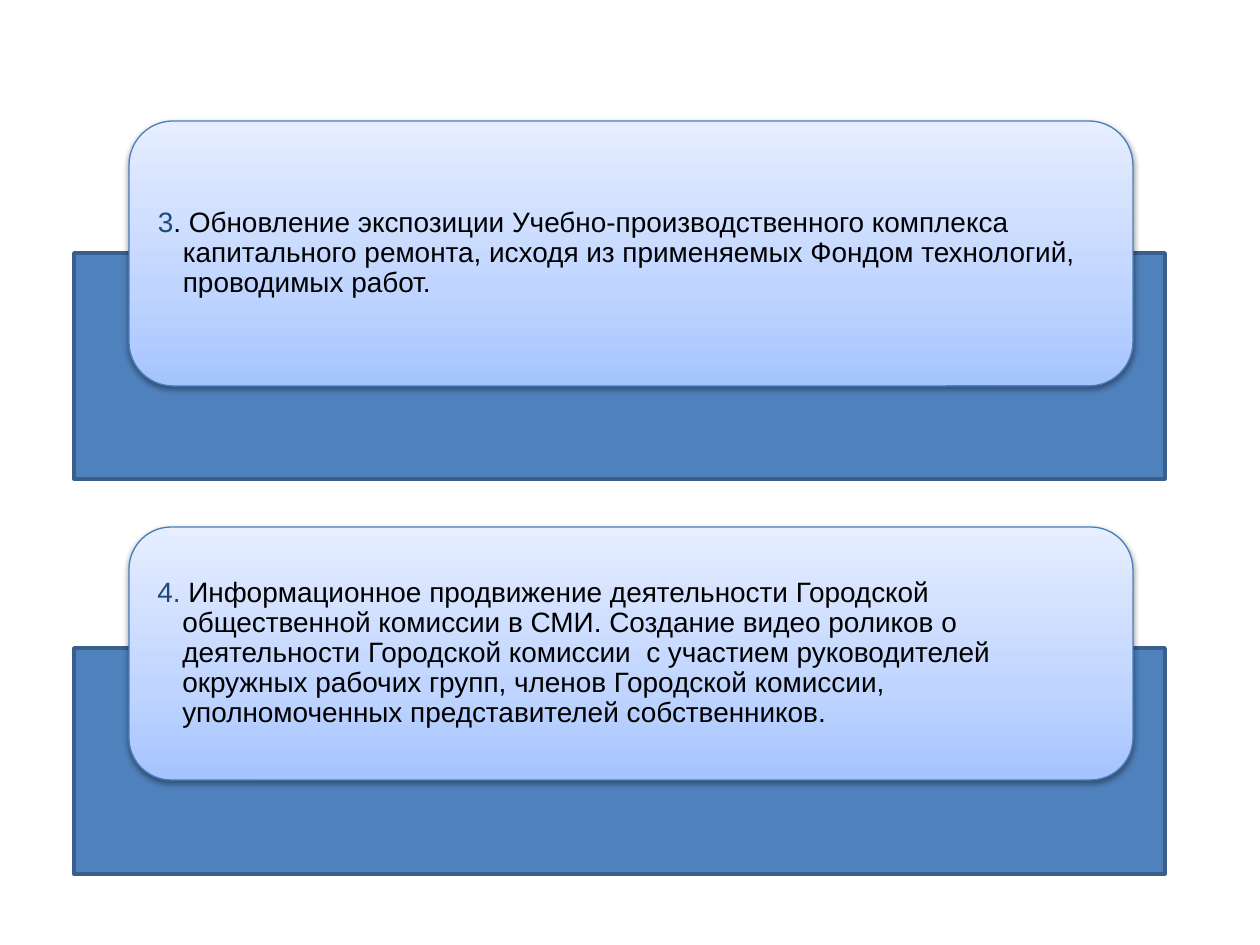
from dataclasses import dataclass

from lxml import etree
from pptx import Presentation
from pptx.dml.color import RGBColor
from pptx.enum import shapes, text
from pptx.oxml import ns
from pptx.util import Pt

EMU_PER_PX = 914400 / 126


@dataclass(frozen=True)
class Theme:
    font: str = "Arial"
    body_size: int = 16
    text_color: str = "000000"
    number_color: str = "1F497D"
    panel_fill: str = "4F81BD"
    panel_line: str = "3A5F8C"
    card_line: str = "4B7EBC"
    card_stops: tuple = ((0, "A4C4FF"), (35, "BFD4FF"), (100, "E6EEFF"))
    shadow_color: str = "000000"


THEME = Theme()

# Shared columns: left, width
PANEL_X, PANEL_WIDTH, PANEL_HEIGHT = 74, 1091, 226
CARD_X, CARD_WIDTH = 129, 1004
CARD_INSET, HANGING_INDENT = 16, 25

# Panel top, card top, card height, runs as (text, colour)
ITEMS = (
    (253, 121, 265, (
        ("3", THEME.number_color),
        (". Обновление экспозиции Учебно-производственного комплекса "
         "капитального ремонта, исходя из применяемых Фондом технологий, "
         "проводимых работ.", THEME.text_color),
    )),
    (648, 527, 253, (
        ("4. ", THEME.number_color),
        ("Информационное продвижение деятельности Городской общественной "
         "комиссии в СМИ. Создание видео роликов о деятельности Городской "
         "комиссии  с участием руководителей окружных рабочих групп, членов "
         "Городской комиссии, уполномоченных представителей собственников.",
         THEME.text_color),
    )),
)


def px(length):
    return round(length * EMU_PER_PX)


def color(value):
    return RGBColor.from_string(value)


def add_node(parent, tag, **attributes):
    values = {name: str(value) for name, value in attributes.items()}
    return etree.SubElement(parent, ns.qn(tag), values)


def add_box(slide, preset, box, line_color, line_width):
    shape = slide.shapes.add_shape(preset, *map(px, box))
    shape.shadow.inherit = False
    shape.line.color.rgb = color(line_color)
    shape.line.width = Pt(line_width)
    return shape


def add_panel(slide, top):
    box = (PANEL_X, top, PANEL_WIDTH, PANEL_HEIGHT)
    panel = add_box(slide, shapes.MSO_SHAPE.RECTANGLE, box, THEME.panel_line, 2)
    panel.fill.solid()
    panel.fill.fore_color.rgb = color(THEME.panel_fill)


def set_card_gradient(card):
    card.fill.gradient()
    card.fill.gradient_angle = 90
    stops = card.element.spPr.find(".//" + ns.qn("a:gsLst"))
    for stop in list(stops):
        stops.remove(stop)
    for position, value in THEME.card_stops:
        stop = add_node(stops, "a:gs", pos=position * 1000)
        add_node(stop, "a:srgbClr", val=value)


def set_card_shadow(card):
    effects = card.element.spPr.find(ns.qn("a:effectLst"))
    shadow = add_node(effects, "a:outerShdw", blurRad=Pt(3.1), dist=Pt(1.6),
                      dir=90 * 60000, rotWithShape=0)
    shade = add_node(shadow, "a:srgbClr", val=THEME.shadow_color)
    add_node(shade, "a:alpha", val=38000)


def write_text(card, runs):
    frame = card.text_frame
    frame.word_wrap = True
    frame.vertical_anchor = text.MSO_ANCHOR.MIDDLE
    frame.margin_left = frame.margin_right = px(CARD_INSET)
    frame.margin_top = frame.margin_bottom = 0
    paragraph = frame.paragraphs[0]
    paragraph.alignment = text.PP_ALIGN.LEFT
    paragraph.line_spacing = 0.9
    # Hanging indent
    properties = paragraph._p.get_or_add_pPr()
    properties.set("marL", str(px(HANGING_INDENT)))
    properties.set("indent", str(-px(HANGING_INDENT)))
    for content, run_color in runs:
        run = paragraph.add_run()
        run.text = content
        run.font.name = THEME.font
        run.font.size = Pt(THEME.body_size)
        run.font.color.rgb = color(run_color)


def add_card(slide, top, height, runs):
    box = (CARD_X, top, CARD_WIDTH, height)
    card = add_box(slide, shapes.MSO_SHAPE.ROUNDED_RECTANGLE, box,
                   THEME.card_line, 0.75)
    set_card_gradient(card)
    set_card_shadow(card)
    write_text(card, runs)


def main():
    presentation = Presentation()
    presentation.slide_width, presentation.slide_height = px(1260), px(945)
    slide = presentation.slides.add_slide(presentation.slide_layouts[6])
    # Each item is a card overlapping the panel behind it
    for panel_top, card_top, card_height, runs in ITEMS:
        add_panel(slide, panel_top)
        add_card(slide, card_top, card_height, runs)
    presentation.save("out.pptx")


if __name__ == "__main__":
    main()
